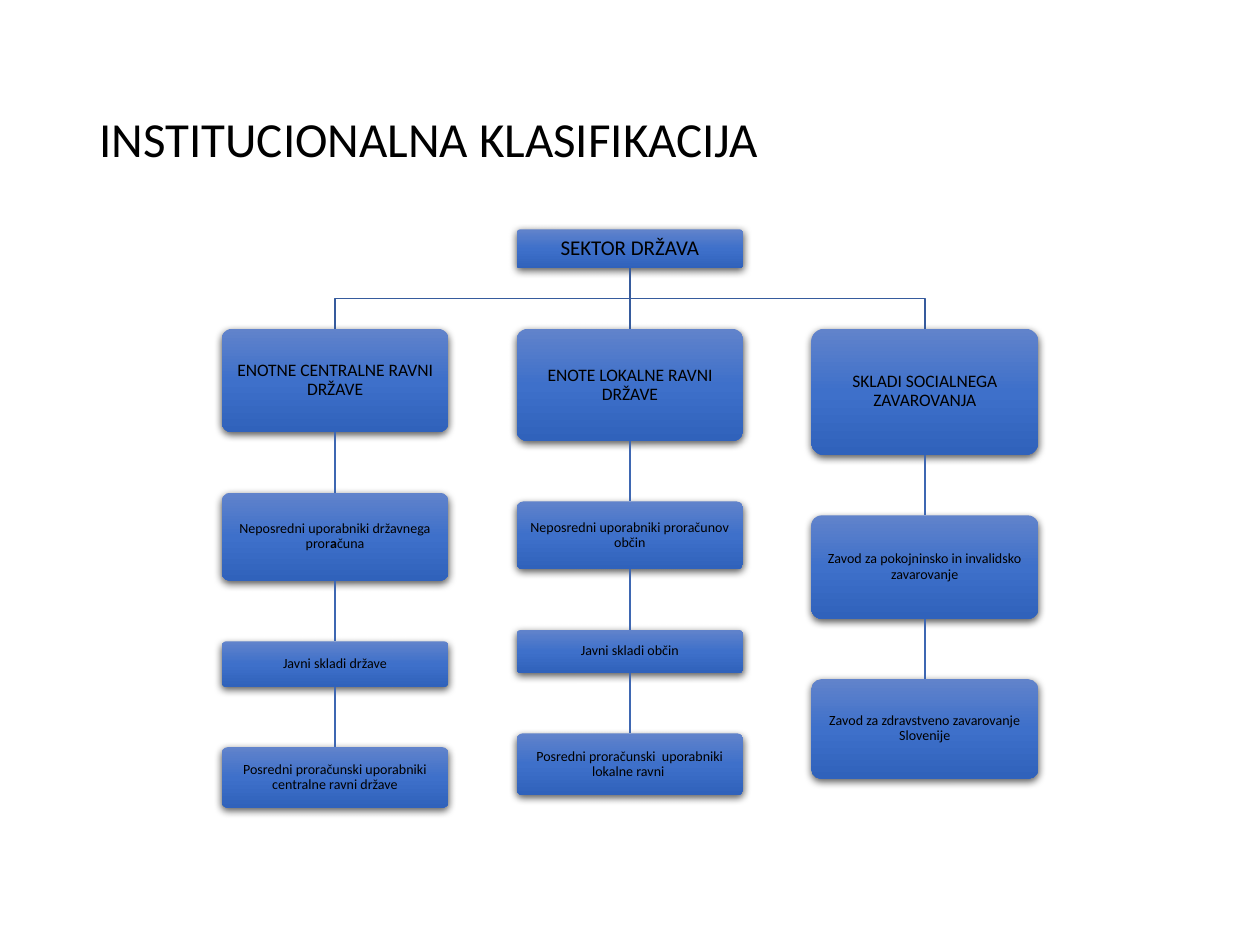
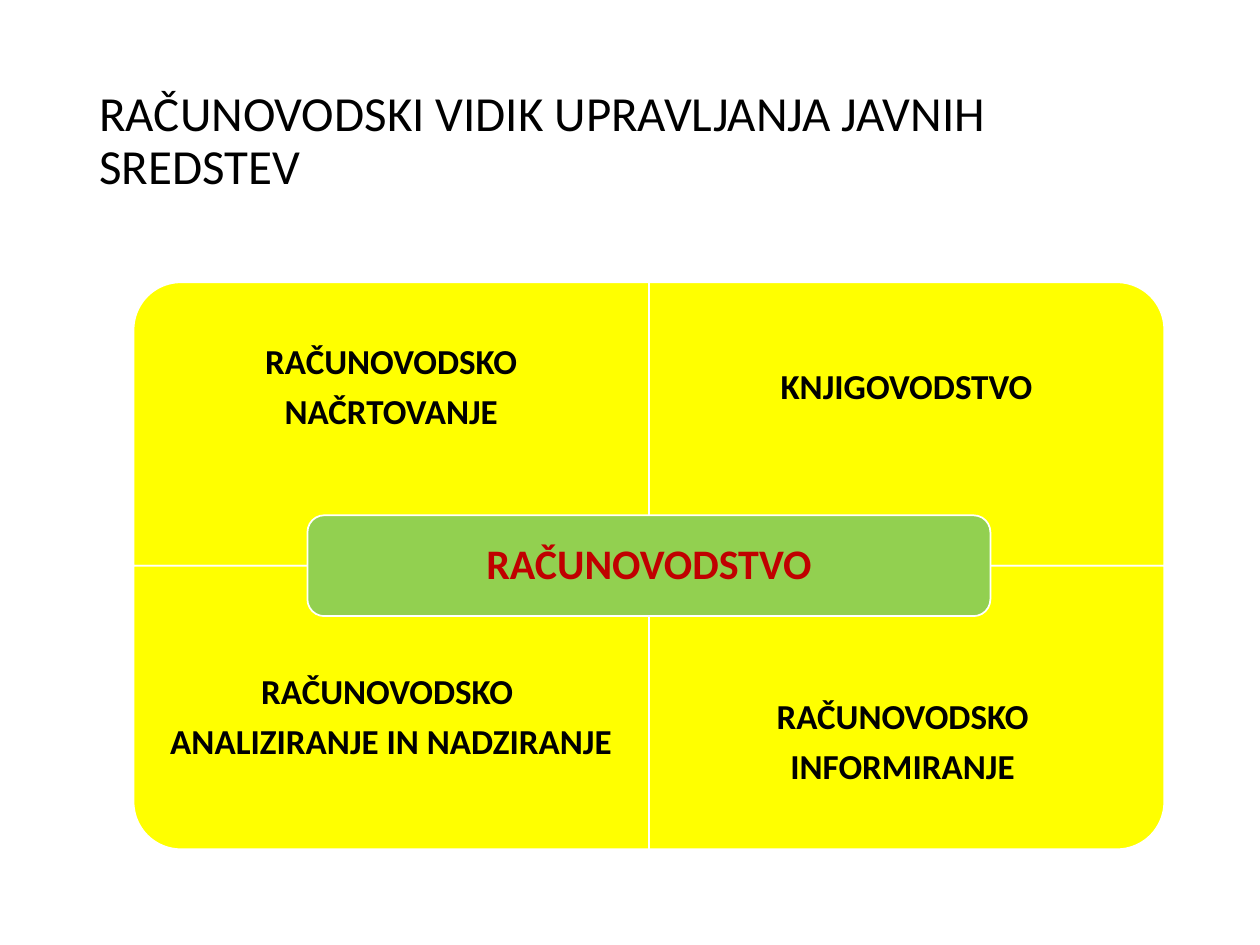
import copy

import pptx
import pptx.dml.color
import pptx.enum.shapes
import pptx.enum.text
import pptx.oxml
import pptx.oxml.ns
import pptx.util
from lxml import etree

Inches = pptx.util.Inches
Pt = pptx.util.Pt
SHAPE = pptx.enum.shapes.MSO_SHAPE
ALIGN = pptx.enum.text.PP_ALIGN
qn = pptx.oxml.ns.qn

FONT = "Calibri"
BLACK, WHITE = "000000", "FFFFFF"
YELLOW, GREEN, RED = "FFFF00", "92D050", "C00000"
BOX_GRADIENT = ((0, "6183CB"), (0.5, "3E70CA"), (1, "3062BB"))
BRANCH_LINE, CHAIN_LINE = "365B9D", "3E67B2"

BOX_W, LEVEL_GAP, COLUMN_STEP = 1.8, 0.48, 2.34
ROOT = ("SEKTOR DRŽAVA", 0.31)
# Each box: text (bold between asterisks) and height
COLUMNS = [
    [("ENOTNE CENTRALNE RAVNI DRŽAVE", 0.82),
     ("Neposredni uporabniki državnega pror*a*čuna", 0.7),
     ("Javni skladi države", 0.36),
     ("Posredni proračunski uporabniki centralne ravni države", 0.48)],
    [("ENOTE LOKALNE RAVNI DRŽAVE", 0.89),
     ("Neposredni uporabniki proračunov občin", 0.54),
     ("Javni skladi občin", 0.34),
     ("Posredni proračunski  uporabniki lokalne ravni ", 0.49)],
    [("SKLADI SOCIALNEGA ZAVAROVANJA", 1),
     ("Zavod za pokojninsko in invalidsko zavarovanje", 0.82),
     ("Zavod za zdravstveno zavarovanje Slovenije", 0.79)],
]

# Each quadrant: column, row, rotation, extra bottom inset, lines
QUADRANTS = [
    (0, 0, 270, 0, ["RAČUNOVODSKO", "NAČRTOVANJE"]),
    (1, 0, 0, 0, ["KNJIGOVODSTVO"]),
    (0, 1, 180, 0.4, ["RAČUNOVODSKO ", "ANALIZIRANJE IN NADZIRANJE"]),
    (1, 1, 90, 0, ["RAČUNOVODSKO ", "INFORMIRANJE "]),
]


def rgb(value):
    return pptx.dml.color.RGBColor.from_string(value)


def write(sp, lines, size, color=BLACK, bold=False, align=ALIGN.CENTER, inset=None):
    tf = sp.text_frame
    tf.word_wrap = True
    tf.vertical_anchor = pptx.enum.text.MSO_ANCHOR.MIDDLE
    if inset is not None:
        tf.margin_left = tf.margin_right = Inches(inset)
        tf.margin_top = tf.margin_bottom = Inches(inset)
    for i, line in enumerate(lines):
        p = tf.add_paragraph() if i else tf.paragraphs[0]
        p.alignment = align
        p.line_spacing = 0.9
        p.space_after = Pt(0.35 * size if i < len(lines) - 1 else 0)
        p.font.name, p.font.size, p.font.bold = FONT, Pt(size), bold
        p.font.color.rgb = rgb(color)
        for j, part in enumerate(line.split("*")):
            r = p.add_run()
            r.text = part
            if j % 2:
                r.font.bold = True


def add_box(slide, kind, x, y, w, h):
    sp = slide.shapes.add_shape(kind, Inches(x), Inches(y), Inches(w), Inches(h))
    sp.shadow.inherit = False
    return sp


def add_text(slide, x, y, w, h):
    return slide.shapes.add_textbox(Inches(x), Inches(y), Inches(w), Inches(h))


def add_slide(prs, title):
    slide = prs.slides.add_slide(prs.slide_layouts[6])
    write(add_text(slide, 0.69, 0.4, 8.62, 1.45), [title], 28, align=ALIGN.LEFT)
    return slide


def fill_gradient(sp):
    sp.fill.gradient()
    sp.fill.gradient_angle = 270
    stops = sp._element.spPr.find(qn("a:gradFill")).find(qn("a:gsLst"))
    stops.insert(1, copy.deepcopy(stops[0]))
    for stop, (position, color) in zip(sp.fill.gradient_stops, BOX_GRADIENT):
        stop.position = position
        stop.color.rgb = rgb(color)


def drop_shadow(sp):
    effects = sp._element.spPr.find(qn("a:effectLst"))
    shadow = etree.SubElement(effects, qn("a:outerShdw"), blurRad="57150",
                              dist="19050", dir="5400000", algn="ctr", rotWithShape="0")
    color = etree.SubElement(shadow, qn("a:srgbClr"), val=BLACK)
    etree.SubElement(color, qn("a:alpha"), val="63000")


def add_unit(slide, x, y, h, text, size):
    """Add one box of the organisation chart."""
    sp = add_box(slide, SHAPE.ROUNDED_RECTANGLE, x, y, BOX_W, h)
    sp.adjustments[0] = 0.1
    fill_gradient(sp)
    sp.line.fill.background()
    drop_shadow(sp)
    write(sp, [text], size, inset=0.06)
    return sp


def join_down(slide, upper, lower, color):
    line = slide.shapes.add_connector(pptx.enum.shapes.MSO_CONNECTOR.STRAIGHT, 0, 0, 0, 0)
    line.begin_connect(upper, 2)
    line.end_connect(lower, 0)
    line.line.color.rgb = rgb(color)
    line.line.width = Pt(1)
    etree.SubElement(line._element.spPr, qn("a:effectLst"))


def join_branch(slide, upper, lower):
    """Draw the stepped line from the root box to a side column."""
    x0, y0 = upper.left + upper.width // 2, upper.top + upper.height
    x1, y1 = lower.left + lower.width // 2, lower.top
    middle = (y0 + y1) // 2
    builder = slide.shapes.build_freeform(x0, y0)
    builder.add_line_segments([(x0, middle), (x1, middle), (x1, y1)], close=False)
    sp = builder.convert_to_shape()
    sp.shadow.inherit = False
    sp.fill.background()
    sp.line.color.rgb = rgb(BRANCH_LINE)
    sp.line.width = Pt(1)


def add_column(slide, x, y, units):
    """Stack linked boxes downwards and return the top one."""
    boxes = []
    for level, (text, h) in enumerate(units):
        boxes.append(add_unit(slide, x, y, h, text, 8 if level else 10))
        y += h + LEVEL_GAP
    for upper, lower in zip(boxes, boxes[1:]):
        join_down(slide, upper, lower, CHAIN_LINE)
    return boxes[0]


def add_organisation(slide, x, y):
    text, h = ROOT
    root = add_unit(slide, x + COLUMN_STEP, y, h, text, 12)
    for i, units in enumerate(COLUMNS):
        head = add_column(slide, x + i * COLUMN_STEP, y + h + LEVEL_GAP, units)
        if i == 1:
            join_down(slide, root, head, BRANCH_LINE)
        else:
            join_branch(slide, root, head)


def paint(sp, color):
    sp.fill.solid()
    sp.fill.fore_color.rgb = rgb(color)
    sp.line.color.rgb = rgb(WHITE)
    sp.line.width = Pt(1)


def add_quadrant(slide, x, y, w, h, rotation):
    """Add a tile covering the given box after it is turned."""
    tile_w, tile_h = (h, w) if rotation % 180 else (w, h)
    sp = add_box(slide, SHAPE.ROUND_1_RECTANGLE, x + (w - tile_w) / 2,
                 y + (h - tile_h) / 2, tile_w, tile_h)
    sp.rotation = rotation
    paint(sp, YELLOW)


def add_matrix(slide, x, y, w, h):
    tile_w, tile_h = w / 2, h / 2
    text_h = tile_h * 0.75
    for column, row, rotation, lift, lines in QUADRANTS:
        left, top = x + column * tile_w, y + row * tile_h
        add_quadrant(slide, left, top, tile_w, tile_h, rotation)
        text_top = top + row * (tile_h - text_h)
        label = add_text(slide, left, text_top, tile_w, text_h)
        write(label, lines, 20, bold=True, inset=0.16)
        label.text_frame.margin_bottom += Inches(lift)
    core_w, core_h = 5.42, 0.8
    core = add_box(slide, SHAPE.ROUNDED_RECTANGLE, x + (w - core_w) / 2,
                   y + (h - core_h) / 2, core_w, core_h)
    paint(core, GREEN)
    write(core, ["RAČUNOVODSTVO"], 24, RED, bold=True, inset=0.14)


def main():
    prs = pptx.Presentation()
    prs.slide_width, prs.slide_height = Inches(10), Inches(7.5)
    add_organisation(add_slide(prs, "INSTITUCIONALNA KLASIFIKACIJA"), 1.76, 1.82)
    accounting = add_slide(prs, "RAČUNOVODSKI VIDIK UPRAVLJANJA JAVNIH SREDSTEV")
    add_matrix(accounting, 1.06, 2.24, 8.18, 4.5)
    prs.save("out.pptx")


if __name__ == "__main__":
    main()
